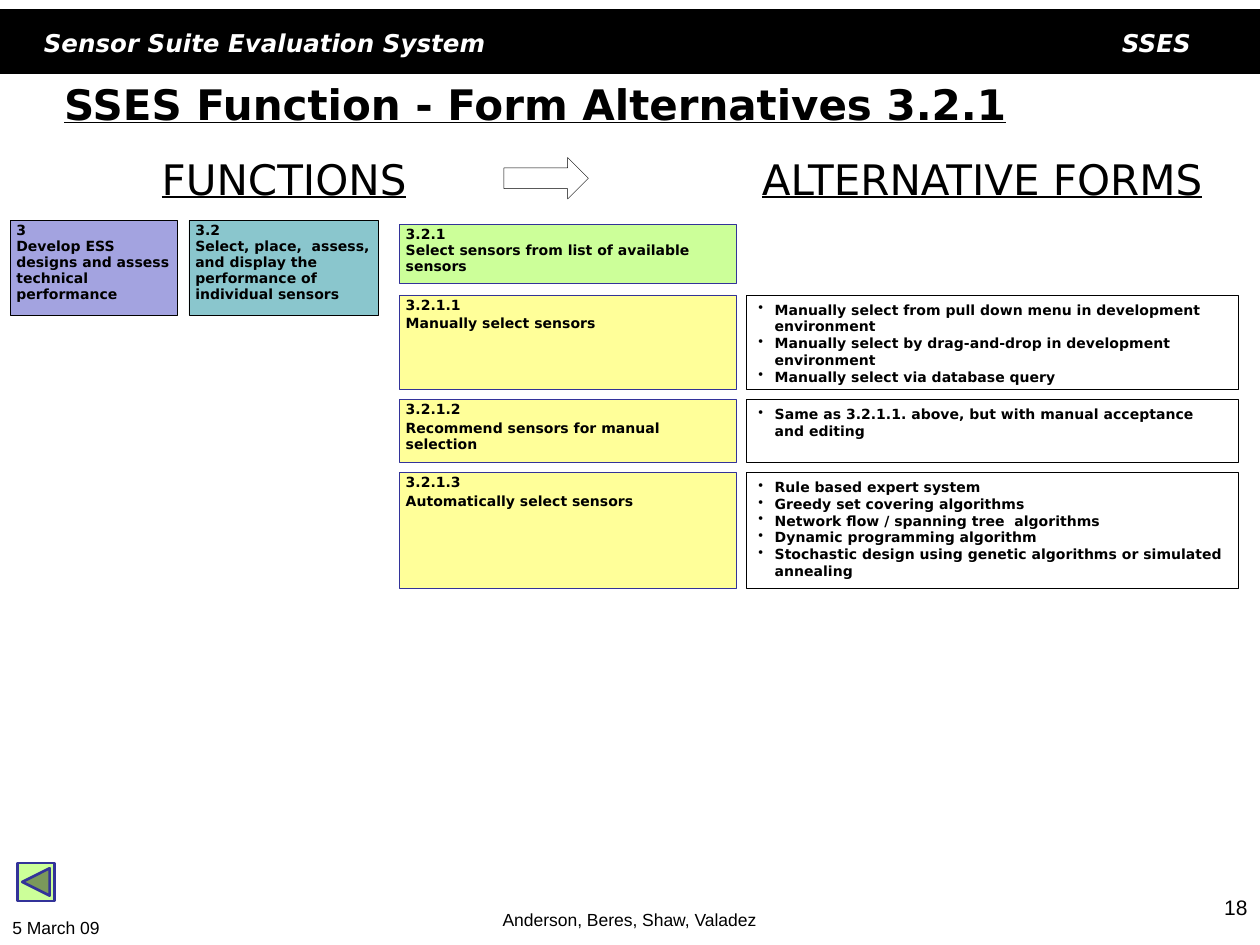
"""Build the SSES function-to-form alternatives slide."""
from dataclasses import dataclass

from lxml import etree
from pptx import Presentation
from pptx.dml.color import RGBColor
from pptx.enum.shapes import MSO_SHAPE
from pptx.enum.text import MSO_ANCHOR, PP_ALIGN
from pptx.oxml.ns import qn
from pptx.util import Inches, Pt

RECTANGLE = MSO_SHAPE.RECTANGLE
RIGHT_ARROW = MSO_SHAPE.RIGHT_ARROW
BACK_BUTTON = MSO_SHAPE.ACTION_BUTTON_BACK_OR_PREVIOUS
TOP, MIDDLE, BOTTOM = MSO_ANCHOR.TOP, MSO_ANCHOR.MIDDLE, MSO_ANCHOR.BOTTOM
LEFT, CENTER, RIGHT = PP_ALIGN.LEFT, PP_ALIGN.CENTER, PP_ALIGN.RIGHT


@dataclass(frozen=True)
class Theme:
    """Fonts, type sizes and colours of the slide."""
    font: str = "DejaVu Sans"
    footer_font: str = "Arial"
    title: int = 24
    banner: int = 14
    number: int = 12
    footer: int = 10
    body: int = 8
    black: str = "000000"
    white: str = "FFFFFF"
    navy: str = "333399"
    violet: str = "A3A3E0"
    teal: str = "8AC6CD"
    green: str = "CCFF99"
    yellow: str = "FFFF99"


THEME = Theme()
TITLE = "SSES Function - Form Alternatives 3.2.1"
BANNER = [
    ("Sensor Suite Evaluation System", (0.25, 0.17, 5, 0.33), LEFT),
    ("SSES", (7.55, 0.17, 2, 0.33), RIGHT),
]
HEADINGS = [
    ("FUNCTIONS", (0.42, 1.17, 3.67, 0.5)),
    ("ALTERNATIVE FORMS", (5.67, 1.17, 4.25, 0.5)),
]
PARENTS = [
    ("3", "Develop ESS designs and assess technical performance",
     (0.08, 1.75, 1.33, 0.75), THEME.violet, THEME.black),
    ("3.2", "Select, place,  assess, and display the performance of individual sensors",
     (1.5, 1.75, 1.5, 0.75), THEME.teal, THEME.black),
    ("3.2.1", "Select sensors from list of available sensors",
     (3.17, 1.78, 2.67, 0.47), THEME.green, THEME.navy),
]
ALTERNATIVES = [
    ("3.2.1.1", "Manually select sensors", 0.75, [
        "Manually select from pull down menu in development environment",
        "Manually select by drag-and-drop in development environment",
        "Manually select via database query",
    ]),
    ("3.2.1.2", "Recommend sensors for manual selection", 0.5, [
        "Same as 3.2.1.1. above, but with manual acceptance and editing",
    ]),
    ("3.2.1.3", "Automatically select sensors", 0.92, [
        "Rule based expert system",
        "Greedy set covering algorithms",
        "Network flow / spanning tree  algorithms",
        "Dynamic programming algorithm",
        "Stochastic design using genetic algorithms or simulated annealing",
    ]),
]
FOOTERS = [
    ("5 March 09", (0, 7.23, 1.57, 0.27), LEFT, TOP, THEME.footer),
    ("Anderson, Beres, Shaw, Valadez", (3.15, 7.08, 3.69, 0.35), CENTER, BOTTOM, THEME.footer),
    ("18", (7.67, 7.05, 2.33, 0.45), RIGHT, TOP, THEME.number),
]
FUNCTION_LEFT, FUNCTION_WIDTH, FORM_WIDTH = 3.17, 2.67, 3.91
ROWS_TOP, GAP = 2.34, 0.08


def lengths(box):
    return [Inches(value) for value in box]


def write(shape, lines, size, font=THEME.font, color=THEME.black, align=LEFT,
          anchor=TOP, **style):
    frame = shape.text_frame
    frame.word_wrap = True
    frame.vertical_anchor = anchor
    frame.text = "\n".join(lines)
    for paragraph in frame.paragraphs:
        paragraph.alignment = align
        paragraph.font.name = font
        paragraph.font.size = Pt(size)
        paragraph.font.color.rgb = RGBColor.from_string(color)
        for name, value in style.items():
            setattr(paragraph.font, name, value)
    return frame


def add_text(slide, box, text, size, **style):
    write(slide.shapes.add_textbox(*lengths(box)), [text], size, **style)


def add_shape(slide, kind, box, fill, line, width=0.25):
    shape = slide.shapes.add_shape(kind, *lengths(box))
    shape.shadow.inherit = False
    if fill:
        shape.fill.solid()
        shape.fill.fore_color.rgb = RGBColor.from_string(fill)
    else:
        shape.fill.background()
    shape.line.color.rgb = RGBColor.from_string(line)
    shape.line.width = Pt(width)
    return shape


def add_function(slide, box, number, name, fill, line, gap=0):
    shape = add_shape(slide, RECTANGLE, box, fill, line)
    frame = write(shape, [number, name], THEME.body, bold=True)
    frame.margin_left = Inches(0.05)
    frame.margin_right = frame.margin_top = frame.margin_bottom = Inches(0.02)
    for paragraph in frame.paragraphs:
        paragraph.line_spacing = 0.95
        paragraph.space_before = Pt(gap)


def add_forms(slide, box, forms):
    shape = add_shape(slide, RECTANGLE, box, None, THEME.black)
    frame = write(shape, forms, THEME.body, bold=True)
    for paragraph in frame.paragraphs:
        properties = paragraph._p.get_or_add_pPr()
        properties.set("marL", str(Inches(0.13)))
        properties.set("indent", str(-Inches(0.13)))
        bullet = etree.Element(qn("a:buChar"), char="•")
        properties.insert_element_before(bullet, "a:tabLst", "a:defRPr", "a:extLst")


def main():
    presentation = Presentation()
    presentation.slide_width, presentation.slide_height = Inches(10), Inches(7.5)
    slide = presentation.slides.add_slide(presentation.slide_layouts[5])

    title = slide.shapes.title
    title.left, title.top, title.width, title.height = lengths((0.41, 0.49, 9, 0.67))
    write(title, [TITLE], THEME.title, anchor=MIDDLE, bold=True, underline=True)

    add_shape(slide, RECTANGLE, (0, 0.08, 10, 0.5), THEME.black, THEME.black, 0.75)
    for text, box, align in BANNER:
        add_text(slide, box, text, THEME.banner, color=THEME.white, align=align,
                 bold=True, italic=True)
    for text, box in HEADINGS:
        add_text(slide, box, text, THEME.title, align=CENTER, underline=True)
    add_shape(slide, RIGHT_ARROW, (4, 1.25, 0.67, 0.33), THEME.white, THEME.black)

    for number, name, box, fill, line in PARENTS:
        add_function(slide, box, number, name, fill, line)
    top = ROWS_TOP
    form_left = FUNCTION_LEFT + FUNCTION_WIDTH + GAP
    for number, name, height, forms in ALTERNATIVES:
        add_function(slide, (FUNCTION_LEFT, top, FUNCTION_WIDTH, height), number, name,
                     THEME.yellow, THEME.navy, gap=1.6)
        add_forms(slide, (form_left, top, FORM_WIDTH, height), forms)
        top += height + GAP

    for text, box, align, anchor, size in FOOTERS:
        add_text(slide, box, text, size, font=THEME.footer_font, align=align, anchor=anchor)
    add_shape(slide, BACK_BUTTON, (0.14, 6.85, 0.29, 0.3), THEME.green, THEME.navy, 1.5)
    presentation.save("out.pptx")


if __name__ == "__main__":
    main()
